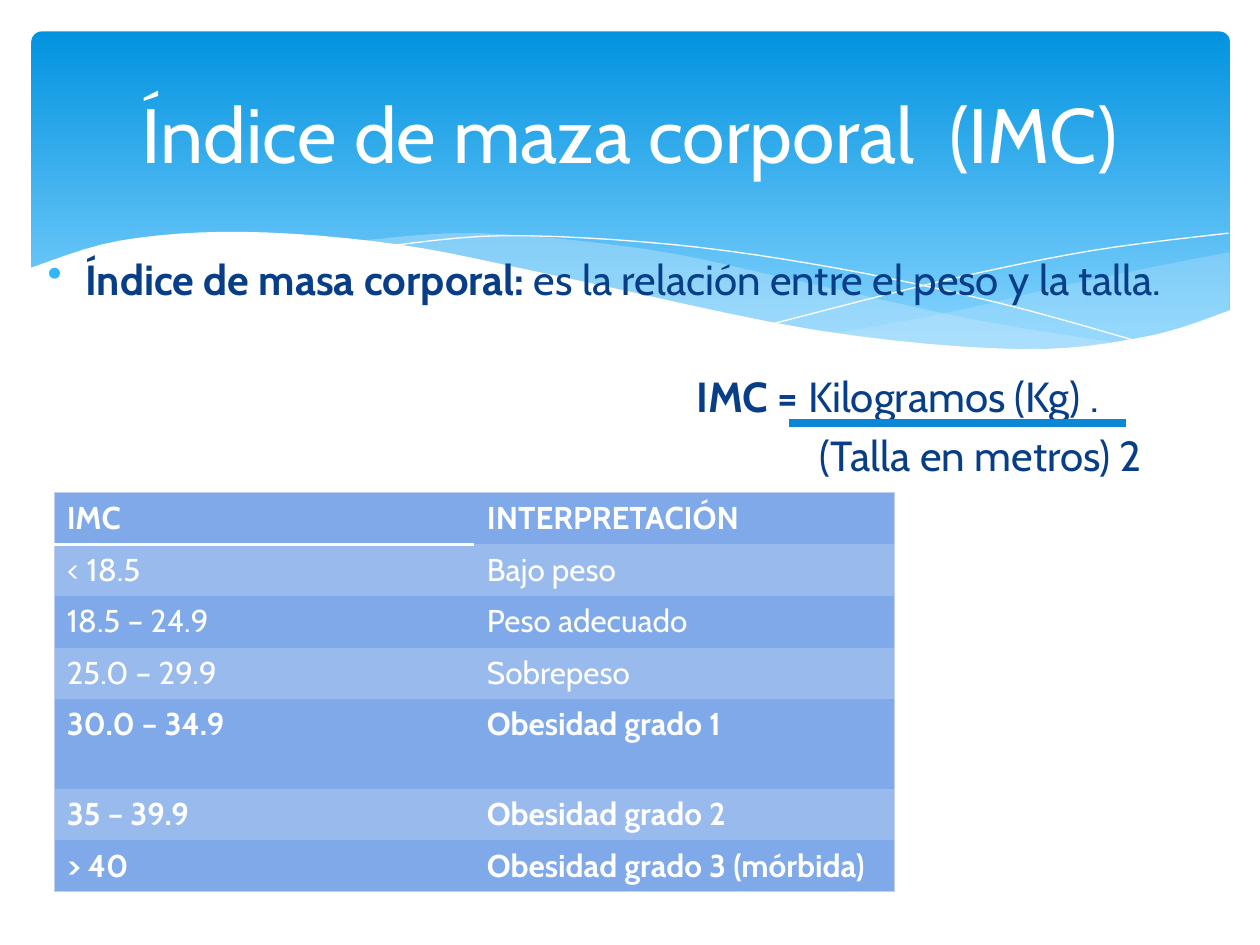
from dataclasses import dataclass

from lxml import etree
from pptx import Presentation
from pptx import util as u
from pptx.dml.color import RGBColor
from pptx.enum import shapes, text
from pptx.oxml.ns import qn

FONT = "Cabin"
WHITE, NAVY, BORDER, PALE = "FFFFFF", "073E87", "C1CEEA", "C6E7FC"
BANDS = "7FA9E8", "99BAED"
STEPS = 6
Point = tuple[float, float]


@dataclass
class Wave:
    edges: list[list[Point]]
    fill: str | None = None
    alpha: int = 100


@dataclass
class Run:
    text: str
    bold: bool = False


@dataclass
class Row:
    imc: str
    meaning: str
    bold: bool = False
    height: float = 0.41


WAVES = [
    Wave([[(9.76, 2), (8.61, 2.23), (7.53, 2.48), (6.61, 2.65)],
          [(6.61, 2.65), (7.45, 2.75), (8.24, 2.77), (9.05, 2.69), (9.76, 2.47)]],
         PALE, 29),
    Wave([[(8.93, 2.73), (7.75, 2.54), (6.29, 2.22), (5.14, 1.98), (3.8, 1.85), (2.86, 1.91)],
          [(2.86, 1.91), (4.49, 2.22), (6.01, 2.55), (7.22, 2.74), (8.07, 2.78), (8.93, 2.73)]],
         PALE, 40),
    Wave([[(3.09, 1.95), (4.01, 1.87), (5.33, 1.94), (6.65, 2.13), (7.95, 2.41), (9.07, 2.72)]]),
    Wave([[(6.13, 2.57), (7.48, 2.23), (8.66, 1.99), (9.75, 1.85)]]),
    Wave([[(0.23, 2.13), (0.95, 1.91), (1.93, 1.84), (3.16, 1.94), (4.47, 2.2),
           (6.48, 2.62), (8.09, 2.77), (9.1, 2.67), (9.77, 2.46)],
          [(9.77, 3.29), (0.23, 3.29)]], WHITE),
]
ROWS = [
    Row("IMC", "INTERPRETACIÓN", True),
    Row("< 18.5", "Bajo peso"),
    Row("18.5 – 24.9", "Peso adecuado"),
    Row("25.0 – 29.9", "Sobrepeso"),
    Row("30.0 – 34.9", "Obesidad grado 1", True, 0.71),
    Row("35 – 39.9", "Obesidad grado 2", True),
    Row("> 40", "Obesidad grado 3 (mórbida)", True),
]


def rgb(value: str) -> RGBColor:
    return RGBColor.from_string(value)


def paint(fill, color: str) -> None:
    fill.solid()
    fill.fore_color.rgb = rgb(color)


def blend(a: float, b: float, c: float, d: float, t: float) -> float:
    return b + t / 2 * (c - a + t * (2 * a - 5 * b + 4 * c - d + t * (3 * (b - c) + d - a)))


def smooth(knots: list[Point]) -> list[Point]:
    padded = [knots[0], *knots, knots[-1]]
    points = [tuple(blend(*axis, step / STEPS) for axis in zip(*padded[i:i + 4]))
              for i in range(len(knots) - 1) for step in range(STEPS)]
    return points + [knots[-1]]


def add_banner(s) -> None:
    sp = s.shapes.add_shape(shapes.MSO_SHAPE.ROUNDED_RECTANGLE, u.Inches(0.25),
                            u.Inches(0.25), u.Inches(9.51), u.Inches(2.7))
    sp.adjustments[0] = 0.03
    sp.shadow.inherit = False
    sp.line.fill.background()
    sp.fill.gradient()
    sp.fill.gradient_angle = 270
    stops = (0, "0293E0"), (0.9, "83D3FE")
    for stop, (position, color) in zip(sp.fill.gradient_stops, stops):
        stop.position = position
        stop.color.rgb = rgb(color)


def add_wave(s, wave: Wave) -> None:
    points = [(u.Inches(x), u.Inches(y)) for edge in wave.edges for x, y in smooth(edge)]
    builder = s.shapes.build_freeform(*points[0])
    builder.add_line_segments(points[1:], close=wave.fill is not None)
    sp = builder.convert_to_shape()
    sp.shadow.inherit = False
    if wave.fill is None:
        sp.fill.background()
        paint(sp.line.fill, WHITE)
        sp.line.width = u.Pt(0)
        return
    sp.line.fill.background()
    paint(sp.fill, wave.fill)
    if wave.alpha < 100:
        color = sp._element.spPr.find(qn("a:solidFill"))[0]
        etree.SubElement(color, qn("a:alpha"), val=str(wave.alpha * 1000))


def add_runs(p, runs: list[Run], size: float, color: str) -> None:
    for run in runs:
        r = p.add_run()
        r.text = run.text
        r.font.name = FONT
        r.font.size = u.Pt(size)
        r.font.bold = run.bold
        r.font.color.rgb = rgb(color)


def add_box(s, left: float, top: float, width: float, height: float):
    tf = s.shapes.add_textbox(u.Inches(left), u.Inches(top),
                              u.Inches(width), u.Inches(height)).text_frame
    tf.word_wrap = True
    return tf


def indent(p, left: float, first: float = 0) -> None:
    pPr = p._p.get_or_add_pPr()
    pPr.set("marL", str(u.Inches(left)))
    pPr.set("indent", str(u.Inches(first)))


def add_bullet(p, color: str) -> None:
    pPr = p._p.get_or_add_pPr()
    bu_color = etree.SubElement(pPr, qn("a:buClr"))
    etree.SubElement(bu_color, qn("a:srgbClr"), val=color)
    etree.SubElement(pPr, qn("a:buChar"), char="•")


def add_border(cell, side: str, color: str, width: float) -> None:
    ln = etree.SubElement(cell._tc.get_or_add_tcPr(), qn(f"a:ln{side}"), w=str(u.Pt(width)))
    etree.SubElement(etree.SubElement(ln, qn("a:solidFill")), qn("a:srgbClr"), val=color)


def add_bmi_table(s, rows: list[Row]) -> None:
    height = sum(row.height for row in rows)
    tbl = s.shapes.add_table(len(rows), 2, u.Inches(0.43), u.Inches(3.91),
                             u.Inches(6.67), u.Inches(height)).table
    tbl._tbl.tblPr[0].text = "{2D5ABB26-0587-4C30-8999-92F81FD0307C}"
    tbl.horz_banding = False
    for i, row in enumerate(rows):
        tbl.rows[i].height = u.Inches(row.height)
        for j, label in enumerate((row.imc, row.meaning)):
            cell = tbl.cell(i, j)
            add_border(cell, "LR"[j], BORDER, 0.75)
            if i == 0:
                add_border(cell, "T", BORDER, 0.75)
                if j == 0:
                    add_border(cell, "B", WHITE, 2)
            elif i == len(rows) - 1:
                add_border(cell, "B", BORDER, 0.75)
            paint(cell.fill, BANDS[i % 2])
            add_runs(cell.text_frame.paragraphs[0], [Run(label, row.bold)], 18, WHITE)


def main() -> None:
    prs = Presentation()
    prs.slide_width, prs.slide_height = u.Inches(10), u.Inches(7.5)
    s = prs.slides.add_slide(prs.slide_layouts[6])
    add_banner(s)
    for wave in WAVES:
        add_wave(s, wave)

    p = add_box(s, 0.28, 1.96, 9.45, 0.5).paragraphs[0]
    indent(p, 0.3, -0.3)
    add_bullet(p, "31B6FD")
    add_runs(p, [Run("Índice de masa corporal: ", True),
                 Run("es la relación entre el peso y la talla.")], 24, NAVY)

    tf = add_box(s, 5.43, 2.89, 4.3, 0.98)
    add_runs(tf.paragraphs[0], [Run("IMC = ", True), Run("Kilogramos (Kg) .")], 24, NAVY)
    p = tf.add_paragraph()
    p.space_before = u.Pt(4.8)
    indent(p, 0.98)
    add_runs(p, [Run("(Talla en metros) 2")], 24, NAVY)

    tf = add_box(s, 0.5, 0.37, 9, 1.37)
    tf.vertical_anchor = text.MSO_ANCHOR.MIDDLE
    p = tf.paragraphs[0]
    p.alignment = text.PP_ALIGN.CENTER
    add_runs(p, [Run("Índice de maza corporal  (IMC)")], 44, WHITE)

    bar = s.shapes.add_connector(shapes.MSO_CONNECTOR.STRAIGHT, u.Inches(6.26),
                                 u.Inches(3.36), u.Inches(8.94), u.Inches(3.36))
    paint(bar.line.fill, "0B87D6")
    bar.line.width = u.Pt(4.5)
    etree.SubElement(bar._element.spPr, qn("a:effectLst"))
    add_bmi_table(s, ROWS)
    prs.save("out.pptx")


if __name__ == "__main__":
    main()
